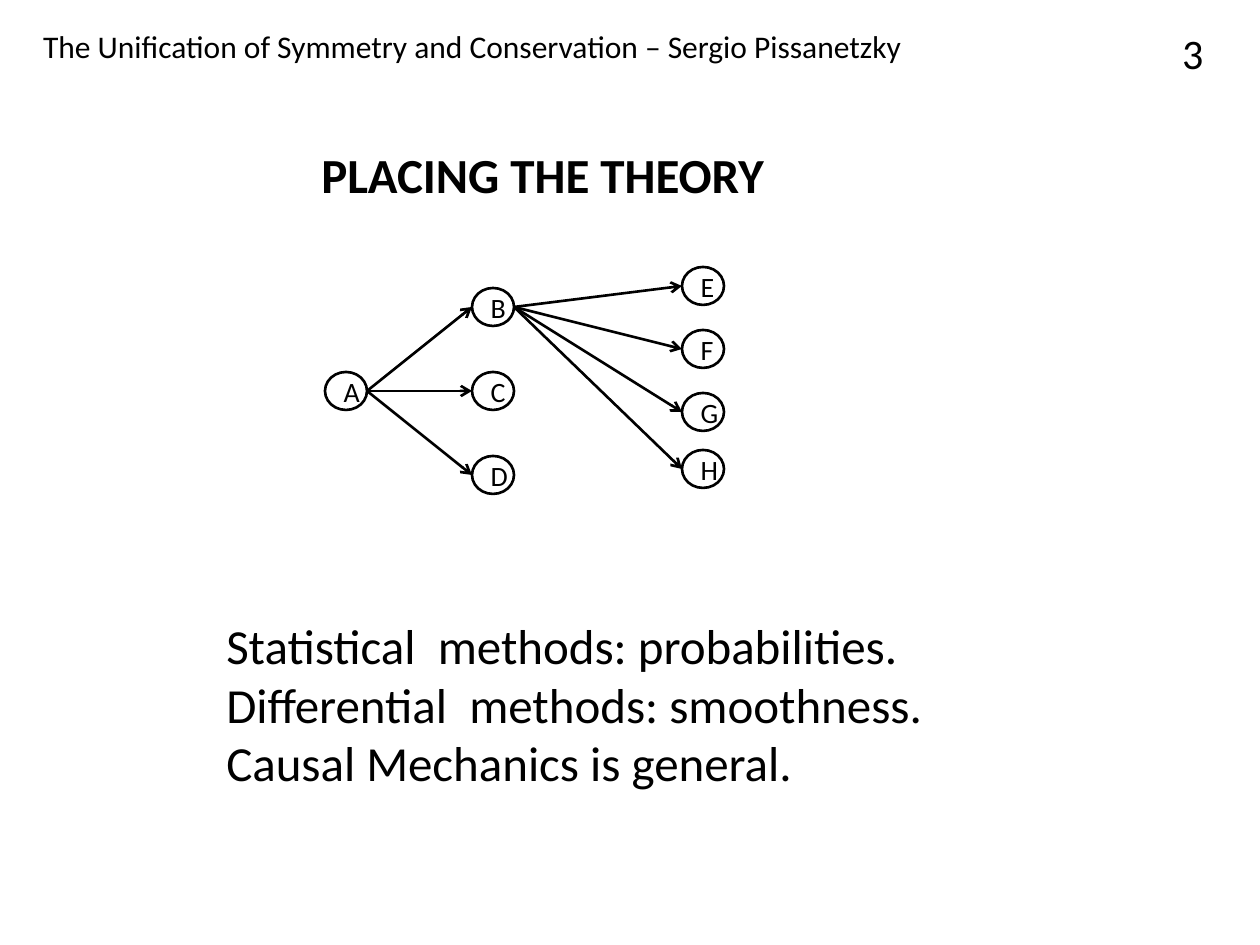
import pptx
import pptx.dml.color
import pptx.enum.dml
import pptx.enum.shapes
import pptx.enum.text
import pptx.util
import pptx.oxml.ns
import lxml.etree

PX = 914400 // 126
BLACK = "000000"
NODE_WIDTH, NODE_HEIGHT = 42, 38
NODES = {
    "A": (325, 372),
    "B": (472, 288),
    "C": (472, 372),
    "D": (472, 456),
    "E": (682, 267),
    "F": (682, 330),
    "G": (682, 393),
    "H": (682, 450),
}
BRANCHES = {"A": "BCD", "B": "EFGH"}
METHODS = [
    "Statistical  methods: probabilities.",
    "Differential  methods: smoothness.",
    "Causal Mechanics is general.",
]


def px(*lengths):
    return [pptx.util.Emu(length * PX) for length in lengths]


def color(value):
    return pptx.dml.color.RGBColor.from_string(value)


def style(paragraph, size, bold=False, align=None):
    paragraph.font.name = "Calibri"
    paragraph.font.size = pptx.util.Pt(size)
    paragraph.font.bold = bold
    paragraph.font.color.rgb = color(BLACK)
    paragraph.alignment = align


def add_text(slide, box, lines, size, bold=False):
    shape = slide.shapes.add_textbox(*px(*box))
    frame = shape.text_frame
    frame.word_wrap = False
    frame.vertical_anchor = pptx.enum.text.MSO_ANCHOR.MIDDLE
    inset = pptx.util.Inches(0.05)
    frame.margin_left = frame.margin_right = inset
    frame.margin_top = frame.margin_bottom = inset
    frame.text = "\n".join(lines)
    for paragraph in frame.paragraphs:
        style(paragraph, size, bold, pptx.enum.text.PP_ALIGN.LEFT)
    return shape


def add_header(slide, text):
    shape = slide.shapes.add_textbox(*px(21, 21, 903, 50))
    frame = shape.text_frame
    frame.word_wrap = False
    frame.auto_size = pptx.enum.text.MSO_AUTO_SIZE.SHAPE_TO_FIT_TEXT
    frame.text = text
    style(frame.paragraphs[0], 18, align=pptx.enum.text.PP_ALIGN.CENTER)


def add_node(slide, letter):
    shape = slide.shapes.add_shape(
        pptx.enum.shapes.MSO_SHAPE.OVAL,
        *px(*NODES[letter], NODE_WIDTH, NODE_HEIGHT))
    shape.shadow.inherit = False
    shape.fill.background()
    shape.line.color.rgb = color(BLACK)
    shape.line.width = pptx.util.Pt(1.5)
    frame = shape.text_frame
    frame.word_wrap = True
    frame.vertical_anchor = pptx.enum.text.MSO_ANCHOR.MIDDLE
    frame.text = letter
    style(frame.paragraphs[0], 16, align=pptx.enum.text.PP_ALIGN.CENTER)


def add_arrow(slide, source, target):
    source_left, source_top = NODES[source]
    target_left, target_top = NODES[target]
    half = NODE_HEIGHT // 2
    connector = slide.shapes.add_connector(
        pptx.enum.shapes.MSO_CONNECTOR.STRAIGHT,
        *px(source_left + NODE_WIDTH, source_top + half,
            target_left, target_top + half))
    connector.line.color.rgb = color(BLACK)
    connector.line.width = pptx.util.Pt(1.5)
    qn = pptx.oxml.ns.qn
    properties = connector.element.spPr
    outline = properties.find(qn("a:ln"))
    lxml.etree.SubElement(outline, qn("a:tailEnd"), type="arrow")
    lxml.etree.SubElement(properties, qn("a:effectLst"))


def main():
    presentation = pptx.Presentation()
    presentation.slide_width = pptx.util.Inches(10)
    presentation.slide_height = pptx.util.Inches(7.5)
    slide = presentation.slides.add_slide(presentation.slide_layouts[6])
    add_header(
        slide,
        "The Unification of Symmetry and Conservation – Sergio Pissanetzky")
    add_text(slide, (1176, 32, 63, 42), ["3"], 24)
    for letter in NODES:
        add_node(slide, letter)
    for source, targets in BRANCHES.items():
        for target in targets:
            add_arrow(slide, source, target)
    add_text(slide, (220, 609, 756, 189), METHODS, 28)
    add_text(slide, (315, 147, 472, 53), ["PLACING THE THEORY"], 28, bold=True)
    presentation.save("out.pptx")


if __name__ == "__main__":
    main()
